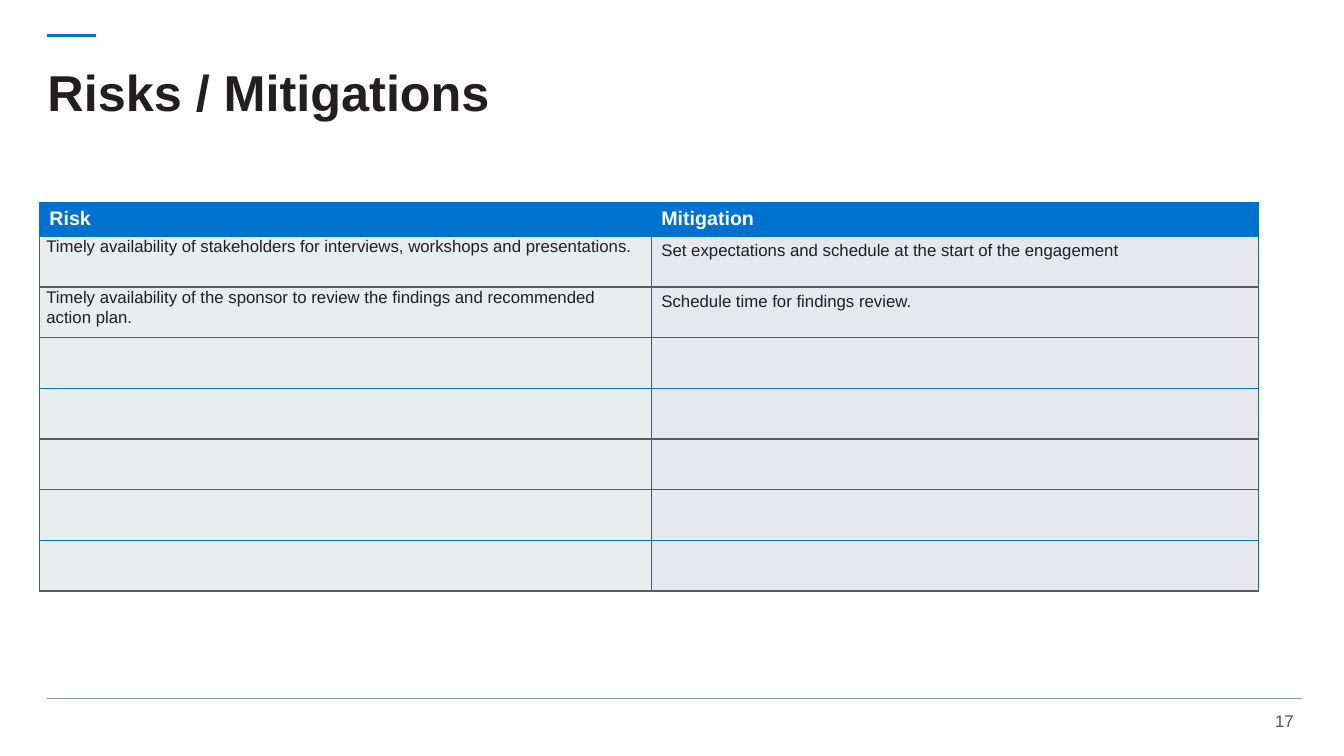
import pptx
import pptx.dml.color
import pptx.enum.shapes
import pptx.enum.text
import pptx.oxml
import pptx.oxml.ns
import pptx.util

Inches = pptx.util.Inches
Pt = pptx.util.Pt
ALIGN = pptx.enum.text.PP_ALIGN
ANCHOR = pptx.enum.text.MSO_ANCHOR

# Content
TITLE = "Risks / Mitigations"
PAGE_NUMBER = "17"
HEADERS = ("Risk", "Mitigation")
RISKS = [
    ("Timely availability of stakeholders for interviews, workshops and presentations.",
     "Set expectations and schedule at the start of the engagement"),
    ("Timely availability of the sponsor to review the findings and recommended action plan.",
     "Schedule time for findings review."),
]
EMPTY_ROWS = 5

# Look
BLUE, INK, SLATE, GRID = "0072CE", "231F20", "425563", "555B60"
COLUMN_FILLS = ("E8EDEE", "E7E8ED")
COLUMN_WIDTHS = (6.07, 6.02)
HEADER_HEIGHT, ROW_HEIGHT = 0.32, 0.503
BLUE_RULES = (0, 3, 6)  # rows with a blue line below; the others have a grey one
RULES = [  # start x, end x, y, colour, width
    (0.47, 0.95, 0.35, BLUE, 2),
    (0.47, 12.91, 6.93, "919EA8", 0.75),
]


def colour(value):
    return pptx.dml.color.RGBColor.from_string(value)


def apply(target, values):
    for name, value in values.items():
        setattr(target, name, value)


def write(frame, text, size, ink, bold=False, **layout):
    para = frame.paragraphs[0]
    apply(para, layout)
    span = para.add_run()
    span.text = text
    apply(span.font, {"name": "Arial", "size": Pt(size), "bold": bold})
    span.font.color.rgb = colour(ink)


def set_borders(cell, sides):
    properties = cell._tc.get_or_add_tcPr()
    for side, ink in sides.items():
        properties.append(pptx.oxml.parse_xml(
            f'<a:ln{side} {pptx.oxml.ns.nsdecls("a")} w="12700"><a:solidFill>'
            f'<a:srgbClr val="{ink}"/></a:solidFill></a:ln{side}>'))


deck = pptx.Presentation()
apply(deck, {"slide_width": Inches(13.33), "slide_height": Inches(7.5)})
page = deck.slides.add_slide(deck.slide_layouts[5])

# Title
title = page.shapes.title
apply(title, {"left": Inches(0.47), "top": Inches(0.47),
              "width": Inches(12.47), "height": Inches(0.95)})
apply(title.text_frame, {"margin_left": 0, "margin_right": 0, "margin_top": 0,
                         "margin_bottom": 0, "word_wrap": True,
                         "vertical_anchor": ANCHOR.MIDDLE,
                         "auto_size": pptx.enum.text.MSO_AUTO_SIZE.NONE})
write(title.text_frame, TITLE, 36, INK, True, alignment=ALIGN.LEFT, line_spacing=0.9)

# Accent and footer rules
for start, end, y, ink, width in RULES:
    rule = page.shapes.add_connector(pptx.enum.shapes.MSO_CONNECTOR.STRAIGHT,
                                     Inches(start), Inches(y), Inches(end), Inches(y))
    rule.line.color.rgb = colour(ink)
    rule.line.width = Pt(width)
    rule._element.spPr.append(
        pptx.oxml.parse_xml(f'<a:effectLst {pptx.oxml.ns.nsdecls("a")}/>'))

# Page number
number = page.shapes.add_textbox(Inches(12.52), Inches(7), Inches(0.41), Inches(0.3))
number.text_frame.word_wrap = True
write(number.text_frame, PAGE_NUMBER, 12, SLATE, alignment=ALIGN.RIGHT)

# Risk table
rows = [HEADERS] + RISKS + [("", "")] * EMPTY_ROWS
height = HEADER_HEIGHT + ROW_HEIGHT * (len(rows) - 1)
table = page.shapes.add_table(len(rows), len(HEADERS), Inches(0.39), Inches(2.01),
                              Inches(sum(COLUMN_WIDTHS)), Inches(height)).table
apply(table, {"first_row": False, "horz_banding": False})
for column, width in zip(table.columns, COLUMN_WIDTHS):
    column.width = Inches(width)

for r, texts in enumerate(rows):
    header = r == 0
    table.rows[r].height = Inches(HEADER_HEIGHT if header else ROW_HEIGHT)
    for c, text in enumerate(texts):
        cell = table.cell(r, c)
        inner = BLUE if header else GRID
        set_borders(cell, {
            "L": inner,
            "R": inner if c == 0 else BLUE,
            "T": BLUE if header or r - 1 in BLUE_RULES else GRID,
            "B": BLUE if r in BLUE_RULES else GRID,
        })
        cell.fill.solid()
        cell.fill.fore_color.rgb = colour(BLUE if header else COLUMN_FILLS[c])
        if header:
            write(cell.text_frame, text, 14, "FFFFFF", True)
        elif text and c == 0:
            apply(cell, {"margin_left": Inches(0.07), "margin_right": Inches(0.07),
                         "margin_top": 0, "margin_bottom": 0})
            write(cell.text_frame, text, 12, INK, line_spacing=1.07, space_after=Pt(8))
        elif text:
            write(cell.text_frame, text, 12, INK)

deck.save("out.pptx")
